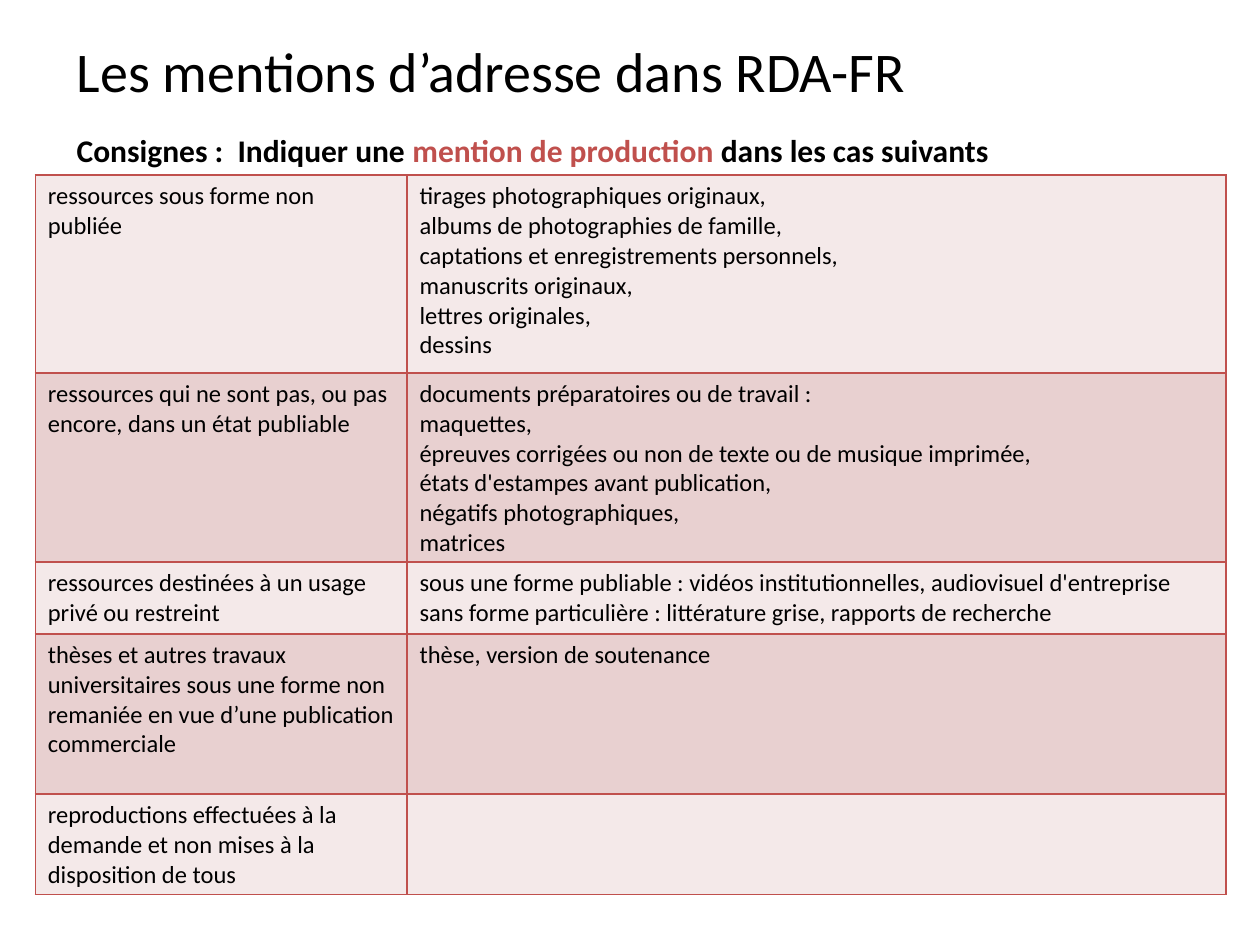
from lxml import etree
from pptx import Presentation
from pptx.dml.color import RGBColor
from pptx.enum.text import MSO_ANCHOR, MSO_AUTO_SIZE, PP_ALIGN
from pptx.oxml.ns import qn
from pptx.util import Inches, Pt

LEFT = PP_ALIGN.LEFT
MIDDLE = MSO_ANCHOR.MIDDLE
NO_FIT = MSO_AUTO_SIZE.NONE
TITLE_ONLY = 5
FONT = "Calibri"
COLORS = {"text": "000000", "accent": "C0504D", "light": "F4E9E9", "dark": "E8D0D0"}
COLUMN_WIDTHS = [2.95, 6.5]
ROW_HEIGHTS = [1.57, 1.5, 0.57, 1.27, 0.8]
CASES = [
    ("ressources sous forme non publiée", [
        "tirages photographiques originaux,",
        "albums de photographies de famille,",
        "captations et enregistrements personnels,",
        "manuscrits originaux,",
        "lettres originales,",
        "dessins",
    ]),
    ("ressources qui ne sont pas, ou pas encore, dans un état publiable", [
        "documents préparatoires ou de travail :",
        "maquettes,",
        "épreuves corrigées ou non de texte ou de musique imprimée,",
        "états d'estampes avant publication,",
        "négatifs photographiques,",
        "matrices",
    ]),
    ("ressources destinées à un usage privé ou restreint", [
        "sous une forme publiable : vidéos institutionnelles, audiovisuel d'entreprise",
        "sans forme particulière : littérature grise, rapports de recherche",
    ]),
    ("thèses et autres travaux universitaires sous une forme non remaniée "
     "en vue d’une publication commerciale", ["thèse, version de soutenance"]),
    ("reproductions effectuées à la demande et non mises à la disposition de tous", []),
]


def add_span(para, text, size, color="text", bold=False):
    span = para.add_run()
    span.text = text
    span.font.name = FONT
    span.font.size = Pt(size)
    span.font.bold = bold
    span.font.color.rgb = RGBColor.from_string(COLORS[color])


def add_title(page, text):
    title = page.shapes.title
    title.left, title.top = Inches(0.51), Inches(0.21)
    title.width, title.height = Inches(9), Inches(0.7)
    frame = title.text_frame
    frame.auto_size = NO_FIT
    frame.vertical_anchor = MIDDLE
    para = frame.paragraphs[0]
    para.alignment = LEFT
    add_span(para, text, 32)


def add_instruction(page, parts):
    box = page.shapes.add_textbox(Inches(0.51), Inches(0.99), Inches(7.49), Inches(0.4))
    box.text_frame.word_wrap = True
    para = box.text_frame.paragraphs[0]
    for text, color in parts:
        add_span(para, text, 18, color, bold=True)


def add_borders(cell, color):
    properties = cell._tc.get_or_add_tcPr()
    for index, side in enumerate(("lnL", "lnR", "lnT", "lnB")):
        line = etree.Element(qn(f"a:{side}"), w=str(Pt(1)))
        fill = etree.SubElement(line, qn("a:solidFill"))
        etree.SubElement(fill, qn("a:srgbClr"), val=COLORS[color])
        properties.insert(index, line)


def fill_cell(cell, lines, color):
    cell.fill.solid()
    cell.fill.fore_color.rgb = RGBColor.from_string(COLORS[color])
    add_borders(cell, "accent")
    frame = cell.text_frame
    for index, text in enumerate(lines):
        para = frame.add_paragraph() if index else frame.paragraphs[0]
        add_span(para, text, 14)


def add_case_table(page):
    frame = page.shapes.add_table(
        len(CASES), len(COLUMN_WIDTHS), Inches(0.28), Inches(1.39),
        Inches(sum(COLUMN_WIDTHS)), Inches(sum(ROW_HEIGHTS)))
    table = frame.table
    table.first_row = False
    table.horz_banding = False
    for column, width in zip(table.columns, COLUMN_WIDTHS):
        column.width = Inches(width)
    for index, (resource, examples) in enumerate(CASES):
        table.rows[index].height = Inches(ROW_HEIGHTS[index])
        color = "dark" if index % 2 else "light"
        fill_cell(table.cell(index, 0), [resource], color)
        fill_cell(table.cell(index, 1), examples, color)


def main():
    deck = Presentation()
    deck.slide_width, deck.slide_height = Inches(10), Inches(7.5)
    page = deck.slides.add_slide(deck.slide_layouts[TITLE_ONLY])
    add_title(page, "Les mentions d’adresse dans RDA-FR")
    add_instruction(page, [
        ("Consignes :  Indiquer une ", "text"),
        ("mention de production ", "accent"),
        ("dans les cas suivants", "text"),
    ])
    add_case_table(page)
    deck.save("out.pptx")


if __name__ == "__main__":
    main()
